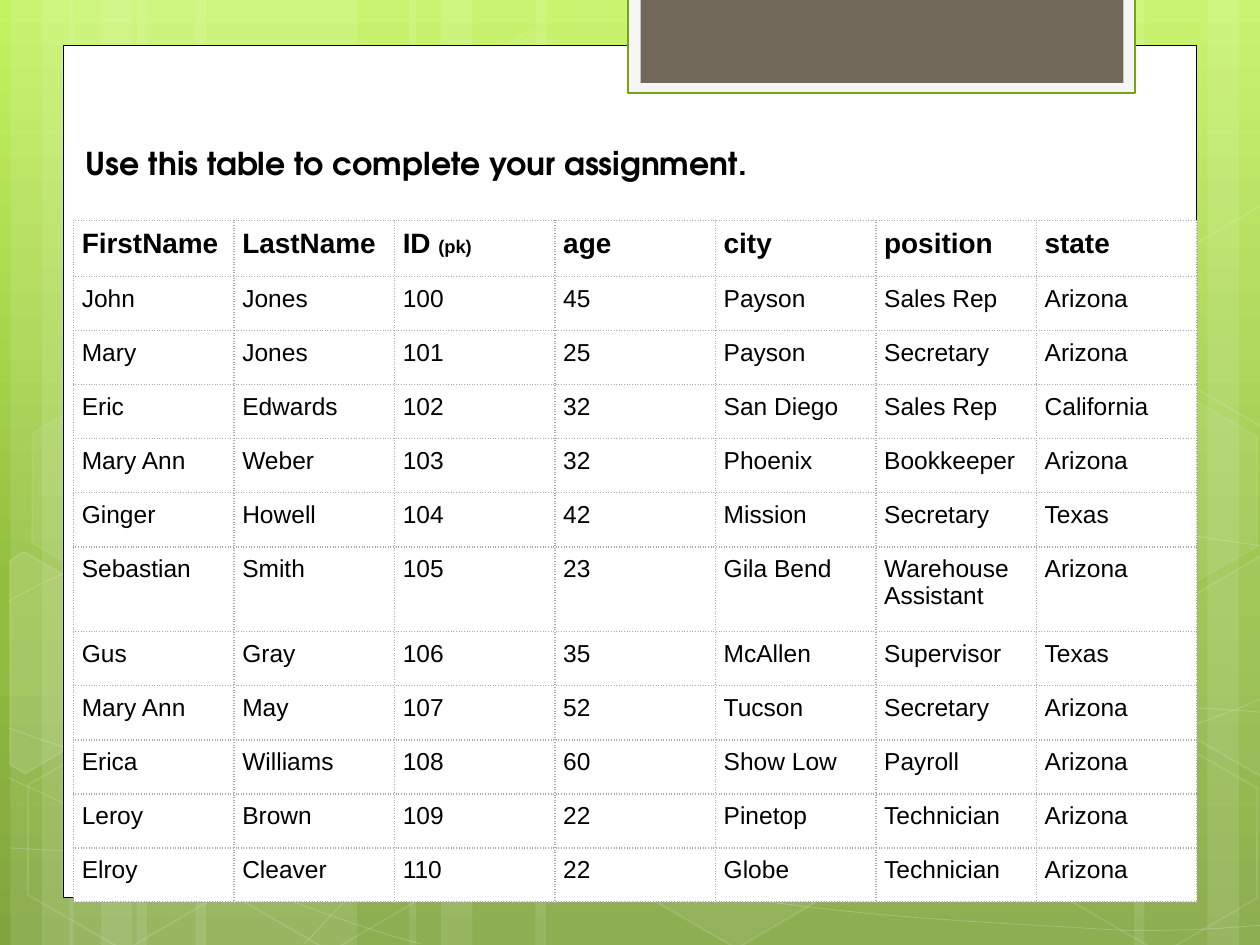
from copy import deepcopy
from typing import NamedTuple

from lxml import etree
from pptx import Presentation
from pptx.dml.color import RGBColor
from pptx.enum.shapes import MSO_SHAPE
from pptx.enum.text import MSO_ANCHOR, MSO_AUTO_SIZE, PP_ALIGN
from pptx.oxml.ns import qn
from pptx.util import Inches, Pt

RECT, HEX = MSO_SHAPE.RECTANGLE, MSO_SHAPE.HEXAGON
LEFT, TOP = PP_ALIGN.LEFT, MSO_ANCHOR.TOP
GROW = MSO_AUTO_SIZE.SHAPE_TO_FIT_TEXT
WIDE, HIGH = Inches(10), Inches(7.5)
COLS, ROWS = 120, 90          # the layout grid, square cells
CELL = WIDE / COLS
TENTH = WIDE / 10             # unit of the outlines
WHITE, BLACK, GREY = "FFFFFF", "000000", "AAAAAA"
GLOW = [(0, "C3F35F"), (0.62, "93BF3F"), (1, "81A53E")]


class Box(NamedTuple):
    x: float
    y: float
    w: float
    h: float


class Look(NamedTuple):
    """Fill and line; alphas in percent."""
    fill: str | None = None
    line: str | None = None
    width: float = 1
    clear: int = 100
    faint: int = 100


class Hexagon(NamedTuple):
    x: float
    y: float
    clear: int
    faint: int


class Outline(NamedTuple):
    points: list
    clear: int


BANDS = [(13, 21), (1, 6), (4, 10), (18.6, 21), (6.6, 6), (9.6, 10),
         (88, 21), (115, 6), (108, 10), (51, 37), (39, 6), (42, 10)]

WAVES = [  # a start, then three points for each curve
    [(0.07, 6.73), (0.61, 6.76), (1.15, 6.79), (1.9, 6.78), (2.65, 6.77),
     (3.58, 6.75), (4.58, 6.65), (5.58, 6.55), (7, 6.36), (7.92, 6.17),
     (8.83, 5.98), (9.77, 5.68), (10.07, 5.51)],
    [(0.07, 4.77), (0.36, 4.61), (0.65, 4.46), (1.21, 4.31), (1.78, 4.16),
     (2.59, 3.94), (3.47, 3.87), (4.36, 3.8), (5.44, 3.79), (6.54, 3.87),
     (7.64, 3.95), (9.47, 4.26), (10.07, 4.34)],
    [(0.06, 6.17), (1.27, 6.72), (2.47, 7.27), (3.34, 7.49)],
    [(0.07, 5.78), (0.38, 5.89), (0.7, 6), (1.28, 6.16), (1.86, 6.31),
     (2.73, 6.56), (3.57, 6.73), (4.4, 6.9), (5.45, 7.08), (6.28, 7.18),
     (7.11, 7.29), (8, 7.33), (8.53, 7.36), (9.05, 7.4), (9.19, 7.38),
     (9.45, 7.38), (9.71, 7.37), (9.89, 7.35), (10.07, 7.34)],
    [(2.42, 7.49), (2.6, 7.29), (2.78, 7.09), (3.02, 6.91), (3.26, 6.73),
     (3.6, 6.53), (3.88, 6.39), (4.16, 6.25), (4.33, 6.19), (4.7, 6.09),
     (5.06, 5.99), (5.73, 5.85), (6.08, 5.78), (6.44, 5.71), (6.49, 5.71),
     (6.8, 5.69), (7.11, 5.66), (7.6, 5.63), (7.94, 5.62), (8.29, 5.61),
     (8.86, 5.62), (8.86, 5.62), (8.86, 5.62), (9.53, 5.62), (9.53, 5.62),
     (9.71, 5.63), (9.88, 5.64), (9.97, 5.65), (10.06, 5.66),
     (10.03, 5.65), (10.06, 5.66)],
]

HEXES = [
    Hexagon(40.1, 4.3, 4, 8), Hexagon(59.6, 70.7, 6, 12),
    Hexagon(1.3, 70.9, 0, 12), Hexagon(1.7, 37.4, 7, 8),
    Hexagon(20.9, 71, 0, 12), Hexagon(90.4, 54.4, 10, 12),
    Hexagon(100.1, 71.2, 0, 12), Hexagon(100.1, 37.7, 7, 8),
]

CUTS = [  # hexagons cut off by the slide's edge
    Outline([(0.08, 4.45), (0.19, 4.38), (0.96, 4.82), (0.95, 5.7),
             (0.2, 6.14), (0.08, 6.07)], 10),
    Outline([(9.26, 4.85), (10.01, 4.41), (10.09, 4.46), (10.09, 6.13),
             (10.02, 6.17), (9.26, 5.73)], 4),
    Outline([(9.26, 2.07), (10.01, 1.63), (10.1, 1.68), (10.09, 3.35),
             (10.02, 3.39), (9.26, 2.95)], 0),
]

FRAME = [
    (Box(6, 4.32, 108, 81.18), Look(WHITE, BLACK, 0.5)),
    (Box(59.84, -0.2, 48.26, 9.1), Look("F5F5F5", "74A510", 1.25)),
    (Box(61, -0.2, 46, 8.1), Look("71685A")),
]

HEAD = ["FirstName", "LastName", "ID ", "age", "city", "position", "state"]
STAFF = [
    ("John", "Jones", 100, 45, "Payson", "Sales Rep", "Arizona"),
    ("Mary", "Jones", 101, 25, "Payson", "Secretary", "Arizona"),
    ("Eric", "Edwards", 102, 32, "San Diego", "Sales Rep", "California"),
    ("Mary Ann", "Weber", 103, 32, "Phoenix", "Bookkeeper", "Arizona"),
    ("Ginger", "Howell", 104, 42, "Mission", "Secretary", "Texas"),
    ("Sebastian", "Smith", 105, 23, "Gila Bend", "Warehouse Assistant", "Arizona"),
    ("Gus", "Gray", 106, 35, "McAllen", "Supervisor", "Texas"),
    ("Mary Ann", "May", 107, 52, "Tucson", "Secretary", "Arizona"),
    ("Erica", "Williams", 108, 60, "Show Low", "Payroll", "Arizona"),
    ("Leroy", "Brown", 109, 22, "Pinetop", "Technician", "Arizona"),
    ("Elroy", "Cleaver", 110, 22, "Globe", "Technician", "Arizona"),
]


def paint(target, tone: str) -> None:
    target.rgb = RGBColor.from_string(tone)


def put(target, **values) -> None:
    for name, value in values.items():
        setattr(target, name, value)


def place(box: Box) -> list[int]:
    return [round(v * CELL) for v in box]


def fade(holder, alpha: int) -> None:
    """Make the solid fill of a shape or line element see-through."""
    if alpha < 100:
        tone = holder.find(qn("a:solidFill"))[0]
        etree.SubElement(tone, qn("a:alpha"), val=str(alpha * 1000))


def dress(shape, look: Look) -> None:
    shape.shadow.inherit = False
    props = shape._element.spPr
    if look.fill and look.clear:
        shape.fill.solid()
        paint(shape.fill.fore_color, look.fill)
        fade(props, look.clear)
    else:
        shape.fill.background()
    if look.line:
        paint(shape.line.color, look.line)
        shape.line.width = Pt(look.width)
        fade(props.find(qn("a:ln")), look.faint)
    else:
        shape.line.fill.background()


def draw(shapes, kind, box: Box, look: Look):
    shape = shapes.add_shape(kind, *place(box))
    dress(shape, look)
    return shape


def trace(shapes, points: list, look: Look, close: bool):
    first, *rest = [(round(x * TENTH), round(y * TENTH)) for x, y in points]
    pen = shapes.build_freeform(*first, scale=1.0)
    pen.add_line_segments(rest, close=close)
    shape = pen.convert_to_shape()
    dress(shape, look)
    return shape


def bend(shape) -> None:
    """Turn each three line segments into one cubic curve."""
    lines = list(shape._element.iter(qn("a:lnTo")))
    for i in range(0, len(lines), 3):
        curve = etree.Element(qn("a:cubicBezTo"))
        lines[i].addprevious(curve)
        for line in lines[i:i + 3]:
            curve.append(line[0])
            line.getparent().remove(line)


def shade(slide) -> None:
    fill = slide.background.fill
    fill.gradient()
    fill.gradient_angle = 270
    stops = slide._element.find(".//" + qn("a:gsLst"))
    stops.insert(1, deepcopy(stops[0]))
    for stop, (spot, tone) in zip(fill.gradient_stops, GLOW):
        stop.position = spot
        paint(stop.color, tone)


def decorate(shapes) -> None:
    for x, w in BANDS:
        draw(shapes, RECT, Box(x, 0, w, ROWS), Look(WHITE, clear=10))
    for knots in WAVES:
        bend(trace(shapes, knots, Look(line=WHITE, width=0.5, faint=20), False))
    for x, y, clear, faint in HEXES:
        look = Look(WHITE, WHITE, clear=clear, faint=faint)
        tile = draw(shapes, HEX, Box(x, y, 21, 18.2), look)
        tile.rotation = 30
        tile.adjustments[0] = 0.285
    for points, clear in CUTS:
        trace(shapes, points, Look(WHITE, WHITE, clear=clear, faint=12), True)
    for box, look in FRAME:
        draw(shapes, RECT, box, look)


def move_back(slide) -> None:
    """Hand the decoration over to the slide's layout."""
    tree = slide.slide_layout.shapes._spTree
    for i, shape in enumerate(list(slide.shapes)):
        if not shape.is_placeholder:
            shape._element.nvSpPr.cNvPr.set("id", str(100 + i))
            tree.append(shape._element)


def write(para, text: str, size: float, bold: bool, face: str = "Arial") -> None:
    run = para.add_run()
    run.text = text
    put(run.font, name=face, size=Pt(size), bold=bold)
    paint(run.font.color, BLACK)


def edge(cell) -> None:
    props = cell._tc.get_or_add_tcPr()
    for side in "LRTB":
        line = etree.SubElement(props, qn("a:ln" + side), w=str(Pt(1)))
        solid = etree.SubElement(line, qn("a:solidFill"))
        etree.SubElement(solid, qn("a:srgbClr"), val=GREY)
        etree.SubElement(line, qn("a:prstDash"), val="dot")


def fill_table(shapes) -> None:
    rows = [HEAD, *STAFF]
    box = Box(7, 21, 107, 65)
    table = shapes.add_table(len(rows), len(HEAD), *place(box)).table
    put(table, first_row=False, horz_banding=False)
    pad = Pt(4.75)
    for r, row in enumerate(rows):
        tall = 48.5 if "Warehouse Assistant" in row else 30.9
        table.rows[r].height = Pt(tall if r else 32)
        for c, value in enumerate(row):
            cell = table.cell(r, c)
            put(cell, margin_left=pad, margin_right=pad, margin_top=pad, margin_bottom=pad)
            edge(cell)
            cell.fill.solid()
            paint(cell.fill.fore_color, WHITE)
            para = cell.text_frame.paragraphs[0]
            write(para, str(value), 14 if r else 16, r == 0)
            if r == 0 and c == 2:
                write(para, "(pk)", 10.5, True)


def set_title(slide) -> None:
    title = slide.shapes.title
    spot = place(Box(6.94, 13.14, 80, 4.8))
    put(title, **dict(zip(("left", "top", "width", "height"), spot)))
    put(title.text_frame, word_wrap=True, auto_size=GROW, vertical_anchor=TOP)
    para = title.text_frame.paragraphs[0]
    para.alignment = LEFT
    write(para, "Use this table to complete your assignment.", 18, True, "TeX Gyre Adventor")


def main() -> None:
    deck = Presentation()
    put(deck, slide_width=WIDE, slide_height=HIGH)
    slide = deck.slides.add_slide(deck.slide_layouts[5])
    shade(slide)
    decorate(slide.shapes)
    move_back(slide)
    fill_table(slide.shapes)
    set_title(slide)
    deck.save("out.pptx")


if __name__ == "__main__":
    main()
